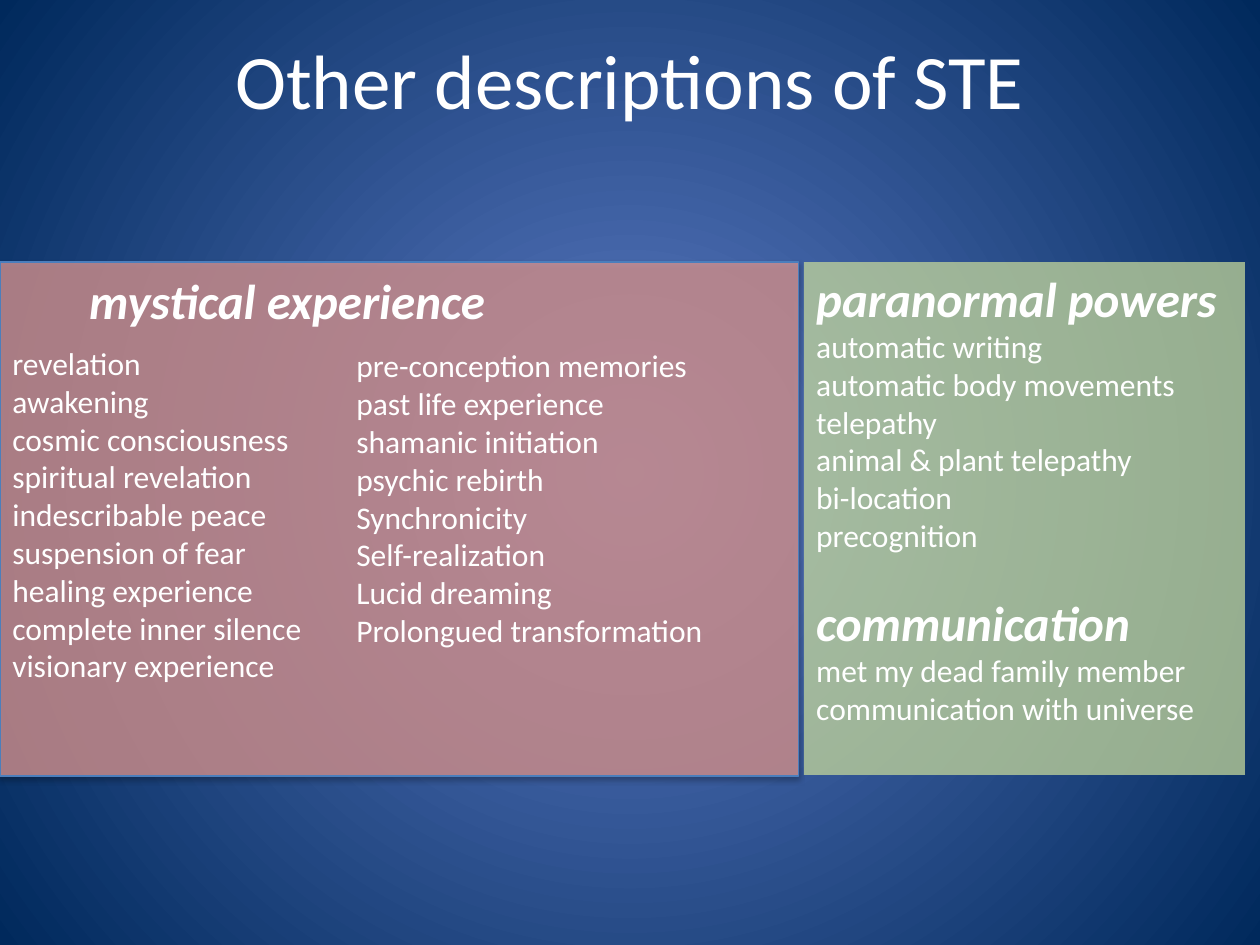
import dataclasses

import lxml.etree
import pptx
import pptx.dml.color
import pptx.enum.shapes
import pptx.enum.text
import pptx.oxml.ns
import pptx.util

Inches = pptx.util.Inches
Pt = pptx.util.Pt
qn = pptx.oxml.ns.qn


@dataclasses.dataclass(frozen=True)
class Theme:
    font: str = "Calibri"
    text: str = "FFFFFF"
    glow: str = "5E7CC5"
    edge: str = "00295C"
    rose: str = "D99694"
    green: str = "C3D69B"
    outline: str = "4B7EBC"
    shadow: str = "000000"
    title_size: int = 44
    heading_size: int = 28
    body_size: int = 18


def rgb(value):
    return pptx.dml.color.RGBColor.from_string(value)


def apply_format(target, values):
    for name, value in values.items():
        setattr(target, name, value)


def add_element(parent, tag, **attributes):
    element = lxml.etree.SubElement(parent, qn(tag))
    for name, value in attributes.items():
        element.set(name, str(value))
    return element


class SlideBuilder:
    def __init__(self, slide, theme):
        self.slide = slide
        self.theme = theme
        body = {"name": theme.font, "size": Pt(theme.body_size), "bold": False, "italic": False}
        self.formats = {
            "title": {**body, "size": Pt(theme.title_size)},
            "heading": {**body, "size": Pt(theme.heading_size), "bold": True, "italic": True},
            "body": body,
        }

    def background(self):
        fill = self.slide.background.fill
        fill.gradient()
        colors = (self.theme.glow, self.theme.edge)
        for stop, position, color in zip(fill.gradient_stops, (0, 1), colors):
            stop.position = position
            stop.color.rgb = rgb(color)
        gradient = self.slide.element.find(".//" + qn("a:gradFill"))
        gradient.remove(gradient.find(qn("a:lin")))
        circle = add_element(gradient, "a:path", path="circle")
        add_element(circle, "a:fillToRect", l=50000, t=50000, r=50000, b=50000)

    def add_lines(self, frame, lines, style, first=True):
        for index, line in enumerate(lines):
            paragraph = frame.paragraphs[0] if first and index == 0 else frame.add_paragraph()
            paragraph.alignment = pptx.enum.text.PP_ALIGN.LEFT
            run = paragraph.add_run()
            run.text = line
            apply_format(run.font, self.formats[style])
            run.font.color.rgb = rgb(self.theme.text)

    def title(self, text, left, top, width, height):
        shape = self.slide.shapes.title
        box = dict(left=left, top=top, width=width, height=height)
        apply_format(shape, {name: Inches(value) for name, value in box.items()})
        shape.text_frame.vertical_anchor = pptx.enum.text.MSO_ANCHOR.MIDDLE
        self.add_lines(shape.text_frame, [text], "title")
        shape.text_frame.paragraphs[0].alignment = pptx.enum.text.PP_ALIGN.CENTER

    def panel(self, left, top, width, height, color, opacity, raised=False):
        shape = self.slide.shapes.add_shape(
            pptx.enum.shapes.MSO_SHAPE.RECTANGLE,
            Inches(left), Inches(top), Inches(width), Inches(height))
        shape.shadow.inherit = False
        shape.fill.solid()
        shape.fill.fore_color.rgb = rgb(color)
        properties = shape.element.spPr
        fill_color = properties.find(qn("a:solidFill") + "/" + qn("a:srgbClr"))
        add_element(fill_color, "a:alpha", val=opacity * 1000)
        if raised:
            shape.line.color.rgb = rgb(self.theme.outline)
            shape.line.width = Pt(0.75)
            shadow = add_element(properties.find(qn("a:effectLst")), "a:outerShdw",
                                 blurRad=Pt(3.1), dist=Pt(1.8), dir=90 * 60000, rotWithShape=0)
            shadow_color = add_element(shadow, "a:srgbClr", val=self.theme.shadow)
            add_element(shadow_color, "a:alpha", val=35000)
        else:
            shape.line.fill.background()
        return shape

    def grouped_panel(self, groups, *box):
        frame = self.panel(*box).text_frame
        frame.word_wrap = True
        frame.vertical_anchor = pptx.enum.text.MSO_ANCHOR.TOP
        for index, (heading, lines) in enumerate(groups.items()):
            self.add_lines(frame, [heading], "heading", index == 0)
            if index:
                frame.paragraphs[-1].space_before = Pt(22)
            self.add_lines(frame, lines, "body", False)

    def text(self, lines, style, left, top, width, height, inset=0.05):
        shape = self.slide.shapes.add_textbox(
            Inches(left), Inches(top), Inches(width), Inches(height))
        frame = shape.text_frame
        apply_format(frame, {"word_wrap": True, "margin_top": Inches(inset)})
        self.add_lines(frame, lines, style)


def main():
    theme = Theme()
    presentation = pptx.Presentation()
    apply_format(presentation, {"slide_width": Inches(10), "slide_height": Inches(7.5)})
    slide = presentation.slides.add_slide(presentation.slide_layouts.get_by_name("Title Only"))
    builder = SlideBuilder(slide, theme)
    builder.background()
    builder.title("Other descriptions of STE", 0.5, 0, 9, 1.25)
    builder.panel(0, 2.08, 6.34, 4.08, theme.rose, 77, raised=True)
    builder.grouped_panel({
        "paranormal powers": [
            "automatic writing", "automatic body movements", "telepathy",
            "animal & plant telepathy", "bi-location", "precognition"],
        "communication": ["met my dead family member", "communication with universe"],
    }, 6.38, 2.08, 3.5, 4.07, theme.green, 75)
    builder.text(["mystical experience"], "heading", 0.61, 2.1, 4.83, 0.88)
    builder.text([
        "revelation", "awakening", "cosmic consciousness", "spiritual revelation",
        "indescribable peace", "suspension of fear", "healing experience",
        "complete inner silence", "visionary experience",
    ], "body", 0, 2.08, 2.9, 3.74, inset=0.65)
    builder.text([
        "pre-conception memories", "past life experience", "shamanic initiation",
        "psychic rebirth", "Synchronicity", "Self-realization", "Lucid dreaming",
        "Prolongued transformation",
    ], "body", 2.73, 2.1, 3.6, 3.13, inset=0.65)
    presentation.save("out.pptx")


if __name__ == "__main__":
    main()
